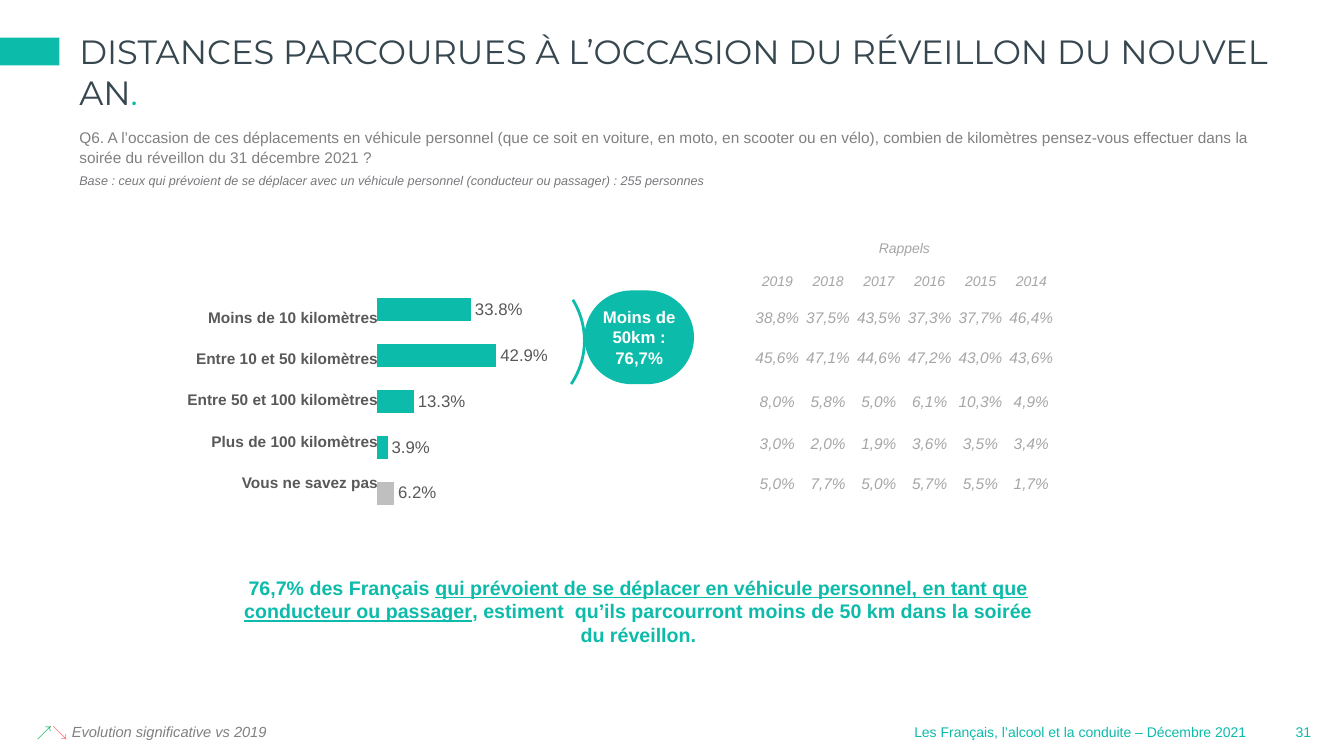
from lxml import etree
from pptx import Presentation
from pptx.chart.data import CategoryChartData
from pptx.dml.color import RGBColor
from pptx.enum.chart import XL_CHART_TYPE, XL_LABEL_POSITION
from pptx.enum.shapes import MSO_SHAPE
from pptx.enum.text import MSO_ANCHOR, PP_ALIGN
from pptx.util import Cm, Pt

LEFT, CENTER, RIGHT = PP_ALIGN.LEFT, PP_ALIGN.CENTER, PP_ALIGN.RIGHT
TOP, MIDDLE = MSO_ANCHOR.TOP, MSO_ANCHOR.MIDDLE
RECT, ROUND, ARC = MSO_SHAPE.RECTANGLE, MSO_SHAPE.ROUNDED_RECTANGLE, MSO_SHAPE.ARC
BAR, OUTSIDE = XL_CHART_TYPE.BAR_CLUSTERED, XL_LABEL_POSITION.OUTSIDE_END

THEME = {
    "font": "Arial", "title_font": "Montserrat",
    "teal": "0CBBAA", "title": "37474F", "question": "808080", "base": "77787B",
    "label": "595959", "recall": "A6A6A6", "unknown": "BFBFBF",
    "white": "FFFFFF", "up": "00B050", "down": "FF5859",
    "title_size": 24, "summary_size": 14, "value_size": 12,
    "label_size": 11, "note_size": 10.5, "small_size": 10, "base_size": 9,
}


def color(name):
    return RGBColor.from_string(THEME[name])


def add_text(p, text, size="label_size", fill="label", font="font", bold=False,
             italic=False, underline=False, align=LEFT, spacing=None, after=0):
    p.alignment = align
    p.space_after = Pt(after)
    if spacing:
        p.line_spacing = spacing
    r = p.add_run()
    r.text = text
    r.font.name = THEME[font]
    r.font.size = Pt(THEME[size])
    r.font.color.rgb = color(fill)
    r.font.bold, r.font.italic, r.font.underline = bold, italic, underline


def add_box(x, y, w, h, wrap=True, inset=True, anchor=TOP):
    tf = s.shapes.add_textbox(Cm(x), Cm(y), Cm(w), Cm(h)).text_frame
    tf.word_wrap = wrap
    tf.vertical_anchor = anchor
    if not inset:
        tf.margin_left = tf.margin_right = tf.margin_top = tf.margin_bottom = 0
    return tf


prs = Presentation()
prs.slide_width, prs.slide_height = Cm(33.87), Cm(19.05)
s = prs.slides.add_slide(prs.slide_layouts[6])

tf = add_box(32.28, 18.11, 1.14, 0.69, wrap=False)
add_text(tf.paragraphs[0], "31", size="small_size", fill="teal", align=CENTER)
tf = add_box(22.71, 18.11, 8.94, 0.69, wrap=False)
add_text(tf.paragraphs[0], "Les Français, l’alcool et la conduite – Décembre 2021",
         size="small_size", fill="teal", align=RIGHT)

sp = s.shapes.add_shape(RECT, 0, Cm(0.95), Cm(1.5), Cm(0.7))
sp.shadow.inherit = False
sp.fill.solid()
sp.fill.fore_color.rgb = color("teal")
sp.line.fill.background()

p = add_box(2, 0.79, 30, 1.2, inset=False).paragraphs[0]
add_text(p, "DISTANCES PARCOURUES À L’OCCASION DU RÉVEILLON DU NOUVEL AN",
         size="title_size", fill="title", font="title_font")
add_text(p, ".", size="title_size", fill="teal", font="title_font")

tf = add_box(2, 3.18, 30, 1.5, inset=False)
add_text(tf.paragraphs[0],
         "Q6. A l’occasion de ces déplacements en véhicule personnel (que ce soit en voiture, "
         "en moto, en scooter ou en vélo), combien de kilomètres pensez-vous effectuer dans la "
         "soirée du réveillon du 31 décembre 2021 ?",
         fill="question", spacing=1.1, after=3)
add_text(tf.add_paragraph(),
         "Base : ceux qui prévoient de se déplacer avec un véhicule personnel "
         "(conducteur ou passager) : 255 personnes",
         size="base_size", fill="base", italic=True, spacing=1.1, after=3)

distances = {
    "Moins de 10 kilomètres": 33.8,
    "Entre 10 et 50 kilomètres": 42.9,
    "Entre 50 et 100 kilomètres": 13.3,
    "Plus de 100 kilomètres": 3.9,
    "Vous ne savez pas": 6.2,
}
data = CategoryChartData(number_format="0.0")
data.categories = list(distances)
data.add_series("Series 1", list(distances.values()))
chart = s.shapes.add_chart(BAR, Cm(9.35), Cm(7.11), Cm(7.32), Cm(6.02), data).chart
chart.has_legend = chart.has_title = False
chart.font.name = THEME["font"]
chart.font.size = Pt(THEME["value_size"])
chart.font.color.rgb = color("label")
chart.category_axis.reverse_order = True
chart.category_axis.visible = chart.value_axis.visible = False
chart.value_axis.has_major_gridlines = False
chart.value_axis.minimum_scale, chart.value_axis.maximum_scale = 0, 100

plot = chart.plots[0]
plot.gap_width = 100
plot.vary_by_categories = False
plot.has_data_labels = True
labels = plot.data_labels
labels.show_value = True
labels.position = OUTSIDE
labels.number_format, labels.number_format_is_linked = '0.0"%"', False
labels.font.name = THEME["font"]
labels.font.size = Pt(THEME["value_size"])
labels.font.color.rgb = color("label")
series = plot.series[0]
for fmt, fill in ((series.format, "teal"), (series.points[4].format, "unknown")):
    fmt.fill.solid()
    fmt.fill.fore_color.rgb = color(fill)

area = chart._chartSpace.chart.plotArea
ns = area.nsmap["c"]
for old in area.findall(f"{{{ns}}}layout"):
    area.remove(old)
layout = etree.Element(f"{{{ns}}}layout")
manual = etree.SubElement(layout, f"{{{ns}}}manualLayout")
for tag, val in (("layoutTarget", "inner"), ("xMode", "edge"), ("yMode", "edge"),
                 ("x", "0.02"), ("y", "0.02"), ("w", "0.96"), ("h", "0.96")):
    etree.SubElement(manual, f"{{{ns}}}{tag}").set("val", val)
area.insert(0, layout)

for i, distance in enumerate(distances):
    tf = add_box(4.7, 7.75 + 1.04 * i, 4.83, 0.48, wrap=False, inset=False, anchor=MIDDLE)
    add_text(tf.paragraphs[0], distance, bold=True, align=RIGHT)

sp = s.shapes.add_shape(ARC, Cm(10.82), Cm(6.63), Cm(3.91), Cm(3.91))
sp.shadow.inherit = False
sp.adjustments[0], sp.adjustments[1] = 176.54, 0
sp.rotation = 34
sp.fill.background()
sp.line.color.rgb = color("teal")
sp.line.width = Pt(2)

sp = s.shapes.add_shape(ROUND, Cm(14.73), Cm(7.32), Cm(2.76), Cm(2.36))
sp.shadow.inherit = False
sp.adjustments[0] = 0.5
sp.fill.solid()
sp.fill.fore_color.rgb = color("teal")
sp.line.fill.background()
tf = sp.text_frame
tf.word_wrap = True
tf.vertical_anchor = MIDDLE
tf.margin_left = tf.margin_right = tf.margin_top = tf.margin_bottom = 0
for p, text in ((tf.paragraphs[0], "Moins de 50km :"), (tf.add_paragraph(), "76,7%")):
    add_text(p, text, size="value_size", fill="white", bold=True, align=CENTER)

recalls = [
    ["Rappels", "", "", "", "", ""],
    ["2019", "2018", "2017", "2016", "2015", "2014"],
    ["38,8%", "37,5%", "43,5%", "37,3%", "37,7%", "46,4%"],
    ["45,6%", "47,1%", "44,6%", "47,2%", "43,0%", "43,6%"],
    ["8,0%", "5,8%", "5,0%", "6,1%", "10,3%", "4,9%"],
    ["3,0%", "2,0%", "1,9%", "3,6%", "3,5%", "3,4%"],
    ["5,0%", "7,7%", "5,0%", "5,7%", "5,5%", "1,7%"],
]
heights = [1.19, 0.46, 1.4, 0.61, 1.6, 0.51, 1.5]
table = s.shapes.add_table(7, 6, Cm(18.95), Cm(5.66), Cm(7.68), Cm(sum(heights))).table
table.first_row = table.horz_banding = False
for col in table.columns:
    col.width = Cm(1.28)
for i, (row, height) in enumerate(zip(recalls, heights)):
    table.rows[i].height = Cm(height)
    for j, text in enumerate(row):
        cell = table.cell(i, j)
        cell.fill.background()
        cell.vertical_anchor = MIDDLE
        cell.margin_left = cell.margin_right = cell.margin_top = Cm(0.02)
        cell.margin_bottom = 0
        if text:
            add_text(cell.text_frame.paragraphs[0], text, fill="recall", italic=True,
                     size="small_size" if i < 2 else "label_size", align=CENTER)
table.cell(0, 0).merge(table.cell(0, 5))

p = add_box(5.64, 14.38, 20.9, 2.06).paragraphs[0]
for text, underline in (
        ("76,7% des Français ", False),
        ("qui prévoient de se déplacer en véhicule personnel, en tant que "
         "conducteur ou passager", True),
        (", estiment  qu’ils parcourront moins de 50 km dans la soirée du réveillon.", False)):
    add_text(p, text, size="summary_size", fill="teal", bold=True,
             underline=underline, align=CENTER)

p = add_box(0.28, 18.06, 7.09, 0.74).paragraphs[0]
add_text(p, "↗", fill="up", align=CENTER)
add_text(p, "↘ ", fill="down", align=CENTER)
add_text(p, "Evolution significative vs 2019", size="note_size", fill="question",
         italic=True, align=CENTER)

prs.save("out.pptx")
